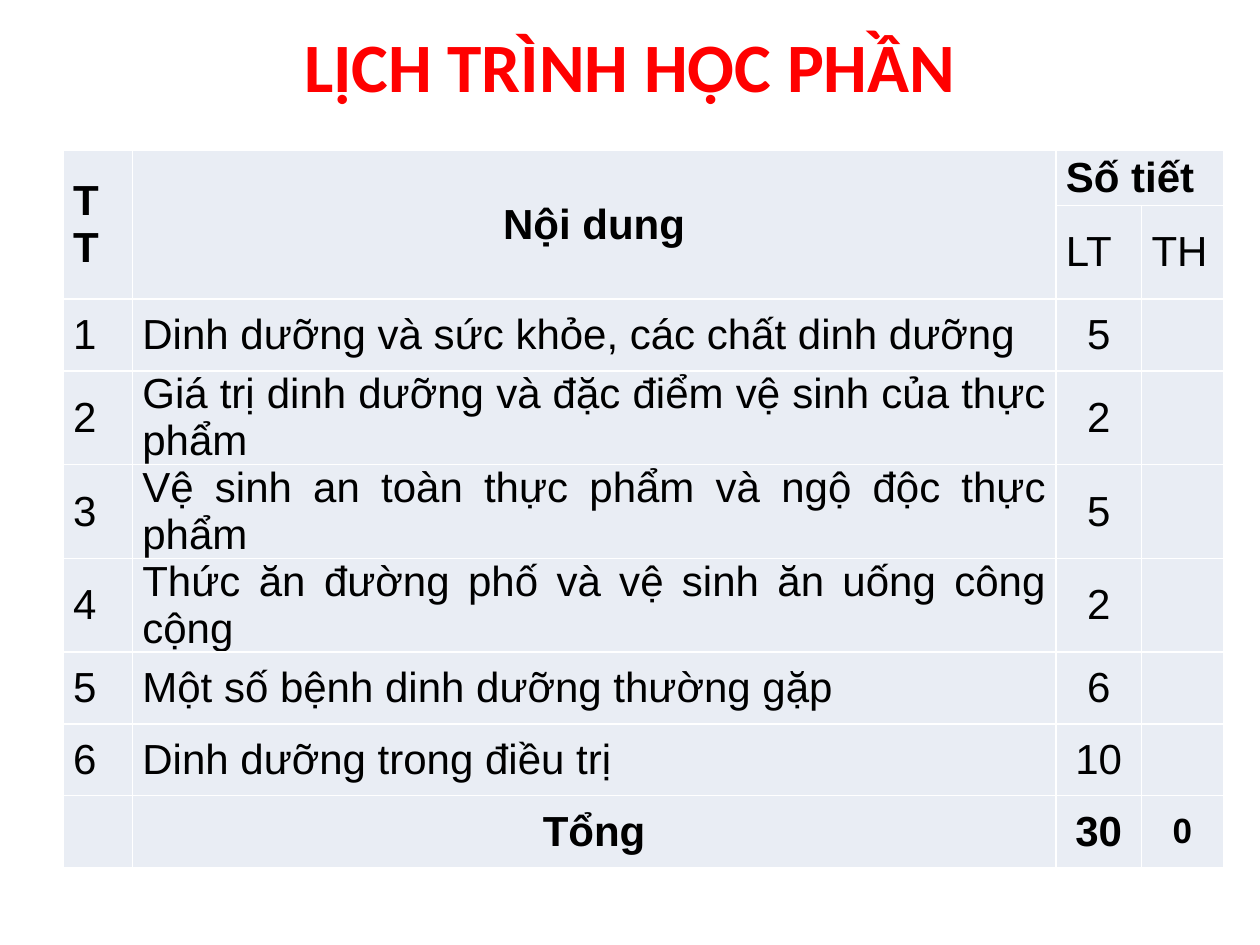
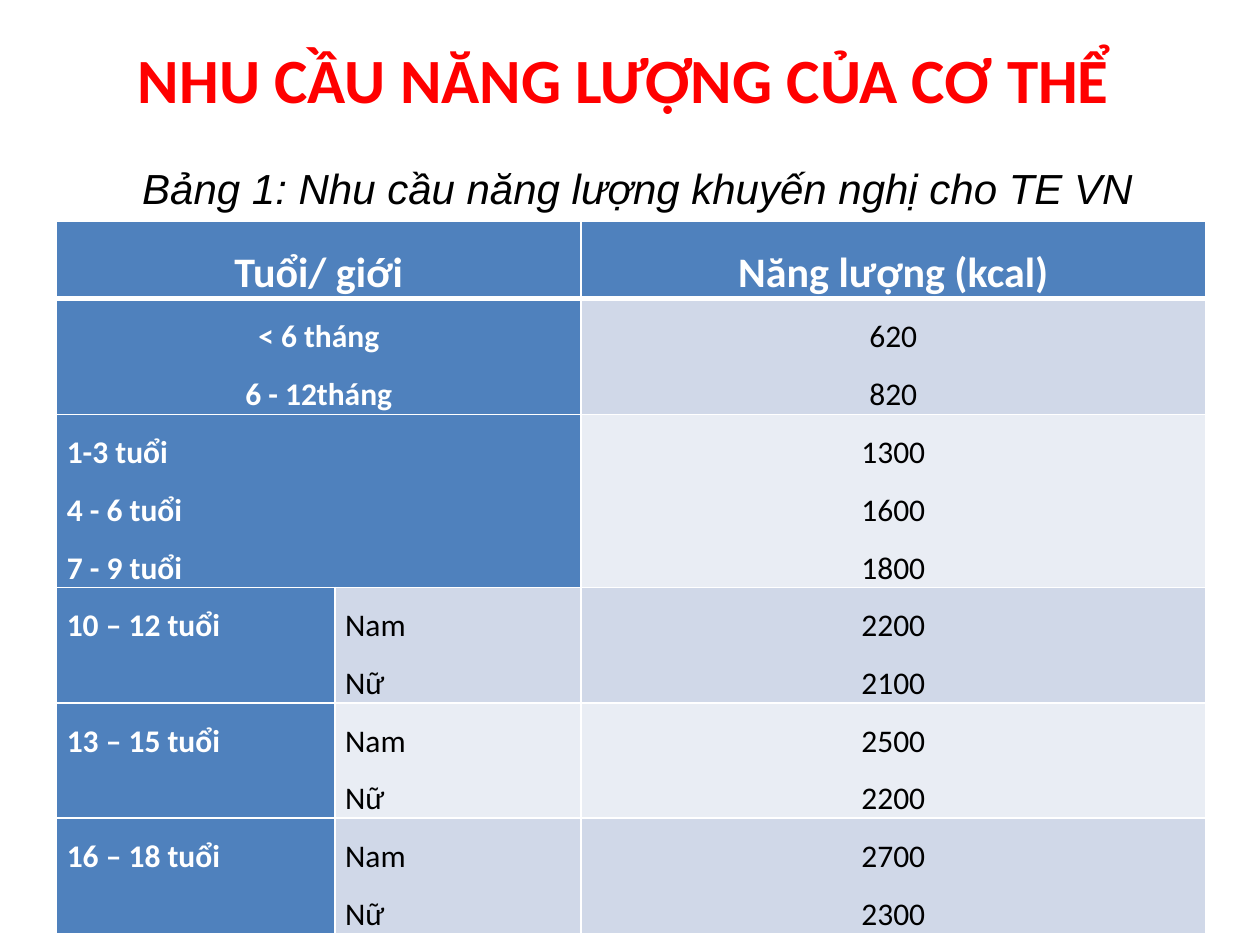
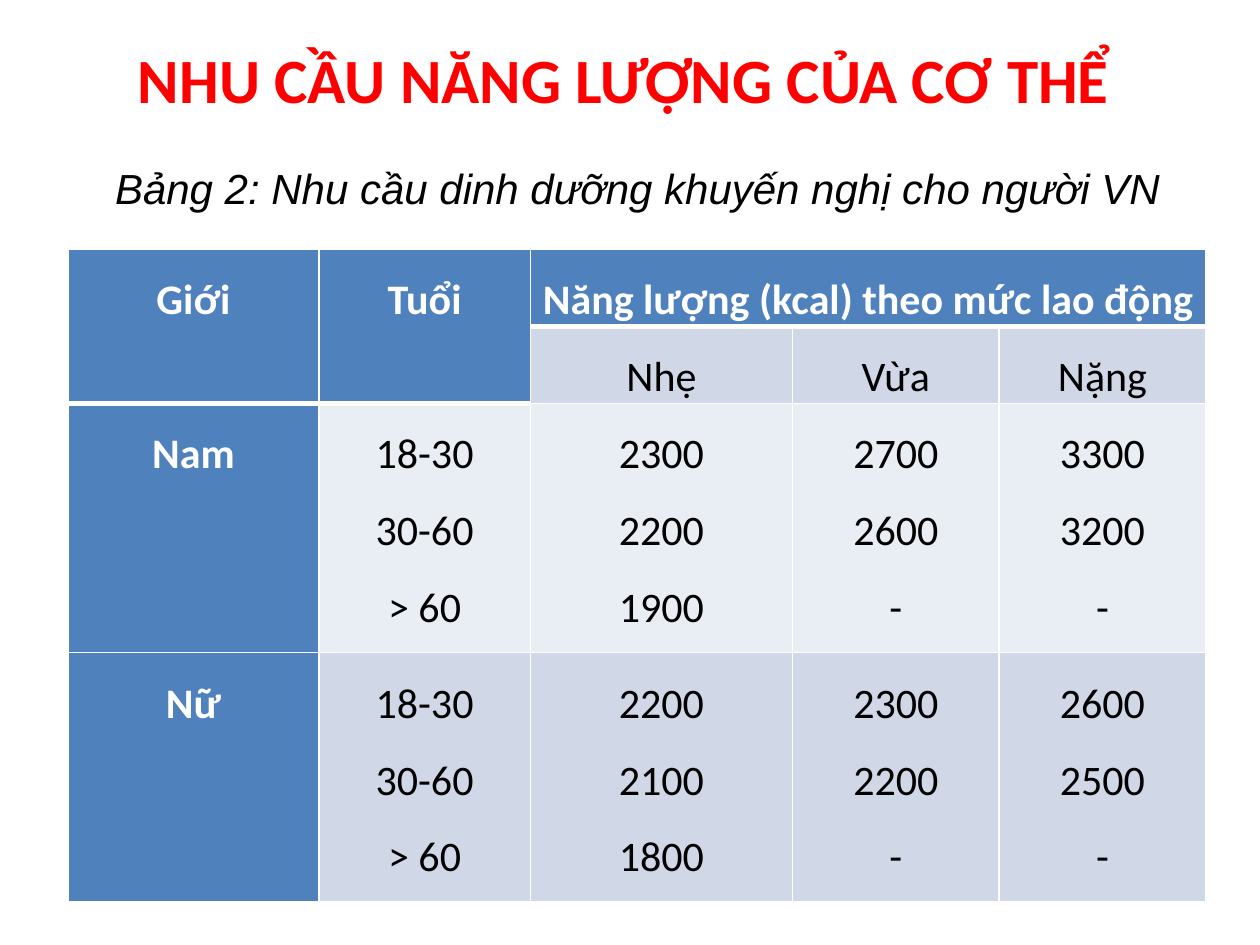
from dataclasses import dataclass

from lxml.etree import SubElement
from pptx import Presentation
from pptx.dml.color import RGBColor
from pptx.enum.text import MSO_ANCHOR, MSO_AUTO_SIZE, PP_ALIGN
from pptx.oxml.ns import qn
from pptx.util import Inches, Pt

RED, BLACK, WHITE = "FF0000", "000000", "FFFFFF"
BLUE, BAND, PALE = "4F81BD", "D0D8E8", "E9EDF4"
CENTER, JUSTIFY = PP_ALIGN.CENTER, PP_ALIGN.JUSTIFY
ENERGY_TITLE = "NHU CẦU NĂNG LƯỢNG CỦA CƠ THỂ"


@dataclass(frozen=True)
class Box:
    left: float
    top: float
    width: float
    height: float


@dataclass(frozen=True)
class Format:
    size: float = 24
    font: str = "Calibri"
    color: str = BLACK
    bold: bool = False
    fill: str = PALE
    align: PP_ALIGN = CENTER
    spacing: float | None = 1.5
    anchor: MSO_ANCHOR = MSO_ANCHOR.TOP


@dataclass(frozen=True)
class Grid:
    left: float
    top: float
    cols: list[float]
    heights: list[float]
    rows: list[list[str]]
    merges: list[tuple[int, int, int, int]]
    heads: frozenset[tuple[int, int]] = frozenset()


TITLE_BOX = Box(0.45, 0.21, 9, 0.82)
CAPTION_BOX = Box(0.56, 1.16, 9, 0.92)

SCHEDULE = Grid(
    0.5, 1.19, [0.55, 7.33, 0.68, 0.65], [0.44] + [0.57] * 8,
    [
        ["TT", "Nội dung", "Số tiết", ""],
        ["", "", "LT", "TH"],
        ["1", "Dinh dưỡng và sức khỏe, các chất dinh dưỡng", "5", ""],
        ["2", "Giá trị dinh dưỡng và đặc điểm vệ sinh của thực phẩm", "2", ""],
        ["3", "Vệ sinh an toàn thực phẩm và ngộ độc thực phẩm", "5", ""],
        ["4", "Thức ăn đường phố và vệ sinh ăn uống công cộng", "2", ""],
        ["5", "Một số bệnh dinh dưỡng thường gặp", "6", ""],
        ["6", "Dinh dưỡng trong điều trị", "10", ""],
        ["", "Tổng", "30", "0"],
    ],
    [(0, 0, 1, 0), (0, 1, 1, 1), (0, 2, 0, 3)],
)

CHILDREN = Grid(
    0.45, 1.76, [2.21, 1.95, 4.96], [0.57, 0.92, 1.21] + [0.79] * 3,
    [
        ["Tuổi/ giới", "", "Năng lượng (kcal)"],
        ["< 6 tháng\n6 - 12tháng", "", "620\n820"],
        ["1-3 tuổi\n4 - 6 tuổi\n7 - 9 tuổi", "", "1300\n1600\n1800"],
        ["10 – 12 tuổi", "Nam\nNữ", "2200\n2100"],
        ["13 – 15 tuổi", "Nam\nNữ", "2500\n2200"],
        ["16 – 18 tuổi", "Nam\nNữ", "2700\n2300"],
    ],
    [(r, 0, r, 1) for r in range(3)],
    frozenset((0, c) for c in range(3)),
)

ADULTS = Grid(
    0.54, 1.98, [1.99, 1.68, 2.08, 1.64, 1.64], [0.61, 0.61, 1.98, 1.98],
    [
        ["Giới", "Tuổi", "Năng lượng (kcal) theo mức lao động", "", ""],
        ["", "", "Nhẹ", "Vừa", "Nặng"],
        ["Nam", "18-30\n30-60\n> 60", "2300\n2200\n1900", "2700\n2600\n-", "3300\n3200\n-"],
        ["Nữ", "18-30\n30-60\n> 60", "2200\n2100\n1800", "2300\n2200\n-", "2600\n2500\n-"],
    ],
    [(0, 0, 1, 0), (0, 1, 1, 1), (0, 2, 0, 4)],
    frozenset([(0, c) for c in range(5)] + [(1, 0), (1, 1)]),
)


def rgb(color: str) -> RGBColor:
    return RGBColor.from_string(color)


def write(tf, text: str, *, size: float, font: str, color: str, bold: bool = False,
          italic: bool = False, align=CENTER, spacing: float | None = None) -> None:
    for i, line in enumerate(text.split("\n")):
        p = tf.add_paragraph() if i else tf.paragraphs[0]
        p.alignment = align
        p.line_spacing = spacing
        r = p.add_run()
        r.text = line
        r.font.size = Pt(size)
        r.font.name = font
        r.font.color.rgb = rgb(color)
        r.font.bold = bold
        r.font.italic = italic


def place(sp, box: Box) -> None:
    sp.left, sp.top = Inches(box.left), Inches(box.top)
    sp.width, sp.height = Inches(box.width), Inches(box.height)
    sp.text_frame.auto_size = MSO_AUTO_SIZE.NONE


def add_titled_slide(prs, title: str, layout: int, box: Box = TITLE_BOX, size: float = 36):
    s = prs.slides.add_slide(prs.slide_layouts[layout])
    sp = s.shapes.title
    place(sp, box)
    sp.text_frame.vertical_anchor = MSO_ANCHOR.MIDDLE
    write(sp.text_frame, title, size=size, font="Calibri", color=RED, bold=True)
    return s


def add_caption(s, text: str) -> None:
    sp = s.placeholders[1]
    place(sp, CAPTION_BOX)
    write(sp.text_frame, text, size=24, font="Arial", color=BLACK, italic=True, spacing=1.2)
    p = sp.text_frame.paragraphs[0]
    p.space_before = p.space_after = Pt(5)
    pPr = p._p.get_or_add_pPr()
    pPr.set("marL", "0")
    pPr.set("indent", "0")
    SubElement(pPr, qn("a:buNone"))


def add_borders(cell, top: float, bottom: float) -> None:
    tcPr = cell._tc.get_or_add_tcPr()
    for side, width in (("L", 1), ("R", 1), ("T", top), ("B", bottom)):
        ln = SubElement(tcPr, qn(f"a:ln{side}"), w=str(Pt(width)))
        fill = SubElement(ln, qn("a:solidFill"))
        SubElement(fill, qn("a:srgbClr"), val=WHITE)


def schedule_format(r: int, c: int) -> Format:
    last = len(SCHEDULE.rows) - 1
    centered = r == last or (r, c) == (0, 1) or (r > 1 and c > 1)
    return Format(
        size=20 if (r, c) == (last, 3) else 24, font="Arial", bold=r in (0, last),
        align=CENTER if centered else JUSTIFY, spacing=None, anchor=MSO_ANCHOR.MIDDLE)


def energy_format(grid: Grid, r: int, c: int) -> Format:
    strong = c == 0 or (r, c) in grid.heads
    children = grid is CHILDREN
    return Format(
        size=18 if children and r else 24, color=WHITE if strong else BLACK, bold=strong,
        fill=BLUE if strong else BAND if r % 2 else PALE,
        align=JUSTIFY if children and r > 1 and c < 2 else CENTER)


def add_grid(s, grid: Grid) -> None:
    frame = s.shapes.add_table(
        len(grid.rows), len(grid.cols), Inches(grid.left), Inches(grid.top),
        Inches(sum(grid.cols)), Inches(sum(grid.heights)))
    table = frame.table
    table.first_row = table.horz_banding = False
    for col, width in zip(table.columns, grid.cols):
        col.width = Inches(width)
    for row, height in zip(table.rows, grid.heights):
        row.height = Inches(height)
    for top, left, bottom, right in grid.merges:
        table.cell(top, left).merge(table.cell(bottom, right))
    for r, row in enumerate(grid.rows):
        for c, text in enumerate(row):
            f = schedule_format(r, c) if grid is SCHEDULE else energy_format(grid, r, c)
            cell = table.cell(r, c)
            cell.margin_left = cell.margin_right = Inches(0.08)
            cell.margin_top = cell.margin_bottom = 0
            cell.vertical_anchor = f.anchor
            add_borders(cell, 3 if (r - 1, c) in grid.heads else 1,
                        3 if (r, c) in grid.heads else 1)
            cell.fill.solid()
            cell.fill.fore_color.rgb = rgb(f.fill)
            if text:
                write(cell.text_frame, text, size=f.size, font=f.font, color=f.color,
                      bold=f.bold, align=f.align, spacing=f.spacing)


def main() -> None:
    prs = Presentation()
    prs.slide_width, prs.slide_height = Inches(10), Inches(7.5)
    s = add_titled_slide(prs, "LỊCH TRÌNH HỌC PHẦN", 5, Box(0.5, 0.18, 9, 0.67), 39.6)
    add_grid(s, SCHEDULE)
    for caption, grid in (
        ("Bảng 1: Nhu cầu năng lượng khuyến nghị cho TE VN", CHILDREN),
        ("Bảng 2: Nhu cầu dinh dưỡng khuyến nghị cho người VN", ADULTS),
    ):
        s = add_titled_slide(prs, ENERGY_TITLE, 1)
        add_caption(s, caption)
        add_grid(s, grid)
    prs.save("out.pptx")


if __name__ == "__main__":
    main()
